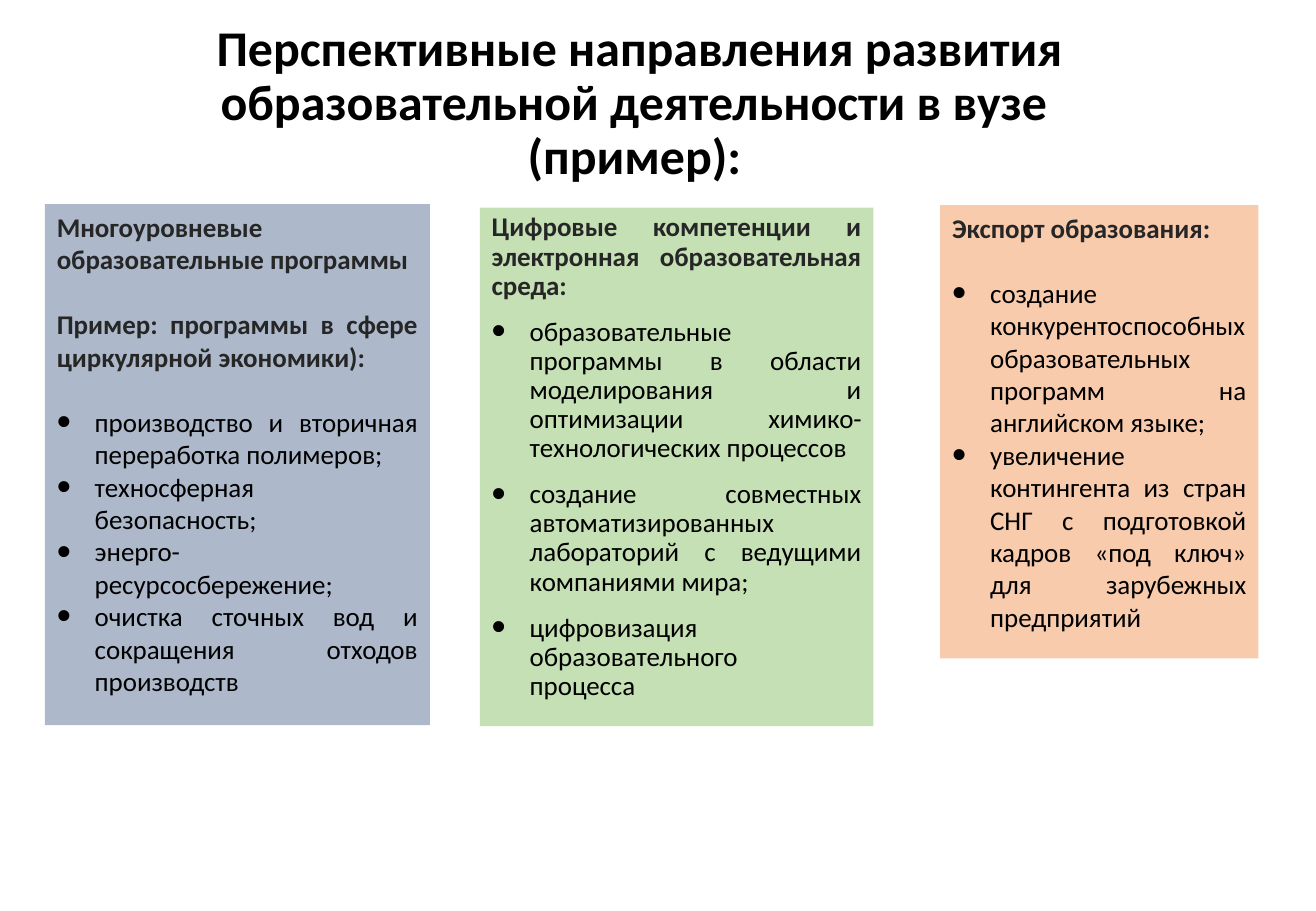
from lxml.etree import SubElement
from pptx import Presentation
from pptx.dml.color import RGBColor
from pptx.enum.shapes import MSO_SHAPE
from pptx.enum.text import MSO_ANCHOR, PP_ALIGN
from pptx.oxml.ns import qn
from pptx.util import Pt

BLACK = RGBColor(0x00, 0x00, 0x00)
CHARCOAL = RGBColor(0x26, 0x26, 0x26)
BLUE = RGBColor(0xAD, 0xB9, 0xCA)
GREEN = RGBColor(0xC5, 0xE0, 0xB4)
ORANGE = RGBColor(0xF8, 0xCB, 0xAD)

TITLE = " Перспективные направления развития образовательной деятельности в вузе (пример):"
TITLE_BOX = (64.1, 13, 624.2, 97.9)
TITLE_FONT = {"name": "Calibri", "size": Pt(29.6), "bold": True}
BODY_FONT = {"name": "Calibri", "size": Pt(16)}
INDENT = 22.5
LINE = 19.5

DIRECTIONS = [
    {
        "box": (284.4, 123.1, 233.3, 307.4),
        "fill": GREEN,
        "headings": ["Цифровые компетенции и электронная образовательная среда:"],
        "points": [
            "образовательные программы в области моделирования и оптимизации химико-технологических процессов",
            "создание совместных автоматизированных лабораторий с ведущими компаниями мира;",
            "цифровизация образовательного\vпроцесса",
        ],
        "spacing": 0.9,
        "heading_gap": 10,
        "point_gap": 10,
    },
    {
        "box": (557.3, 121.7, 188.6, 268.6),
        "fill": ORANGE,
        "headings": ["Экспорт образования:"],
        "points": [
            "создание конкурентоспособных образовательных программ на английском языке;",
            "увеличение контингента из стран СНГ с подготовкой кадров «под ключ» для зарубежных предприятий",
        ],
        "spacing": 1.0,
        "heading_gap": LINE,
        "point_gap": 0,
    },
    {
        "box": (26.6, 121, 228.2, 308.9),
        "fill": BLUE,
        "headings": [
            "Многоуровневые образовательные программы",
            "Пример: программы в сфере циркулярной экономики):",
        ],
        "points": [
            "производство и вторичная переработка полимеров;",
            "техносферная безопасность;",
            "энерго-ресурсосбережение;",
            "очистка сточных вод и сокращения отходов производств",
        ],
        "spacing": 1.0,
        "heading_gap": LINE,
        "point_gap": 0,
    },
]


def write(paragraph, text, align, spacing, font, color):
    paragraph.text = text
    paragraph.alignment = align
    paragraph.line_spacing = spacing
    for run in paragraph.runs:
        for key, value in font.items():
            setattr(run.font, key, value)
        run.font.color.rgb = color
    for line_break in paragraph._p.findall(qn("a:br")):
        SubElement(line_break, qn("a:rPr"), sz=str(int(font["size"].pt * 100)))


def add_bullet(paragraph):
    properties = paragraph._p.get_or_add_pPr()
    properties.set("marL", str(Pt(INDENT)))
    properties.set("indent", str(-Pt(INDENT)))
    SubElement(properties, qn("a:buSzPct"), val="150000")
    SubElement(properties, qn("a:buFont"), typeface="Arial")
    SubElement(properties, qn("a:buChar"), char="•")


def add_direction(slide, direction):
    panel = slide.shapes.add_shape(MSO_SHAPE.RECTANGLE, *map(Pt, direction["box"]))
    panel.shadow.inherit = False
    panel.fill.solid()
    panel.fill.fore_color.rgb = direction["fill"]
    panel.line.fill.background()
    frame = panel.text_frame
    frame.word_wrap = True
    frame.vertical_anchor = MSO_ANCHOR.TOP
    headings = direction["headings"]
    for index, text in enumerate(headings + direction["points"]):
        is_heading = index < len(headings)
        paragraph = frame.add_paragraph() if index else frame.paragraphs[0]
        write(paragraph, text, PP_ALIGN.JUSTIFY, direction["spacing"],
              {**BODY_FONT, "bold": is_heading}, CHARCOAL if is_heading else BLACK)
        if index:
            after_heading = index <= len(headings)
            gap = direction["heading_gap"] if after_heading else direction["point_gap"]
            paragraph.space_before = Pt(gap)
        if not is_heading:
            add_bullet(paragraph)


def main():
    deck = Presentation()
    deck.slide_width, deck.slide_height = Pt(780), Pt(540)
    slide = deck.slides.add_slide(deck.slide_layouts[6])
    title = slide.shapes.add_textbox(*map(Pt, TITLE_BOX)).text_frame
    title.word_wrap = True
    title.vertical_anchor = MSO_ANCHOR.MIDDLE
    write(title.paragraphs[0], TITLE, PP_ALIGN.CENTER, 0.9, TITLE_FONT, BLACK)
    for direction in DIRECTIONS:
        add_direction(slide, direction)
    deck.save("out.pptx")


if __name__ == "__main__":
    main()
